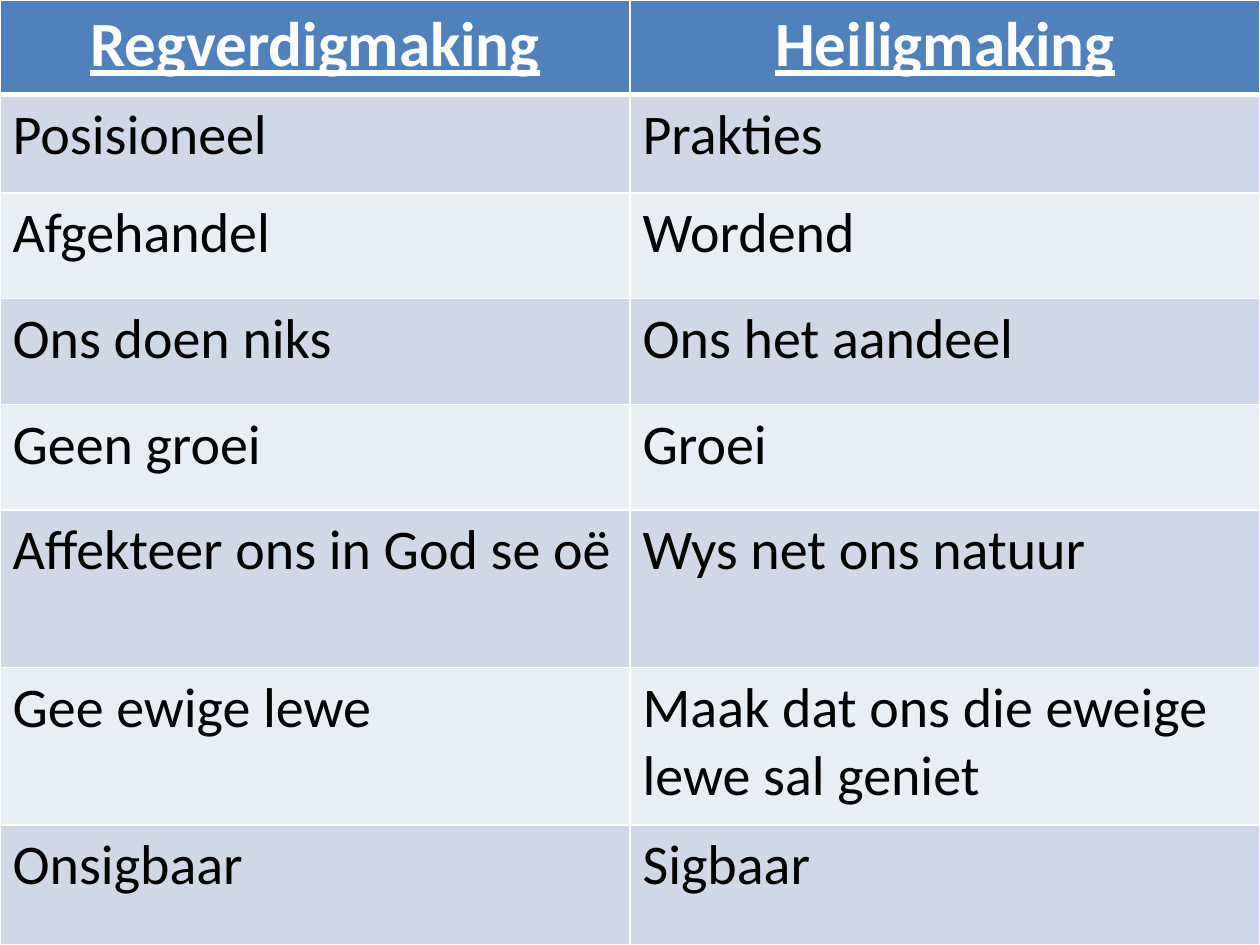
from lxml.etree import SubElement
from pptx import Presentation
from pptx.dml.color import RGBColor
from pptx.enum.text import PP_ALIGN
from pptx.oxml.ns import qn
from pptx.util import Inches, Pt

HEADINGS = ("Regverdigmaking", "Heiligmaking")
# Left text, right text, row height in inches
CONTRASTS = [
    ("Posisioneel", "Prakties", 0.78),
    ("Afgehandel", "Wordend", 0.84),
    ("Ons doen niks", "Ons het aandeel", 0.84),
    ("Geen groei", "Groei", 0.84),
    ("Affekteer ons in God se oë", "Wys net ons natuur", 1.25),
    ("Gee ewige lewe", "Maak dat ons die eweige lewe sal geniet", 1.25),
    ("Onsigbaar", "Sigbaar", 0.95),
]
HEADING_HEIGHT = 0.75
SLIDE_WIDTH, SLIDE_HEIGHT = 10, 7.5

THEME = {
    "font": "Calibri",
    "heading_size": 36,
    "body_size": 32,
    "heading_text": "FFFFFF",
    "body_text": "000000",
    "heading_fill": "4F81BD",
    "bands": ("D0D8E8", "E9EDF4"),
    "border": "FFFFFF",
    "thin": 1,
    "thick": 3,
}


def set_borders(cell, top, bottom):
    """Draw all four cell edges; top and bottom are widths in points."""
    properties = cell._tc.get_or_add_tcPr()
    thin = THEME["thin"]
    for tag, width in (("lnL", thin), ("lnR", thin), ("lnT", top), ("lnB", bottom)):
        line = SubElement(properties, qn(f"a:{tag}"), w=str(Pt(width)))
        fill = SubElement(line, qn("a:solidFill"))
        SubElement(fill, qn("a:srgbClr"), val=THEME["border"])


def fill_cell(cell, text, row):
    is_heading = row == 0
    kind = "heading" if is_heading else "body"
    set_borders(
        cell,
        top=THEME["thick" if row == 1 else "thin"],
        bottom=THEME["thick" if is_heading else "thin"],
    )
    colour = THEME["heading_fill"] if is_heading else THEME["bands"][(row - 1) % 2]
    cell.fill.solid()
    cell.fill.fore_color.rgb = RGBColor.from_string(colour)

    cell.text_frame.text = text
    paragraph = cell.text_frame.paragraphs[0]
    paragraph.alignment = PP_ALIGN.CENTER if is_heading else PP_ALIGN.LEFT
    font = paragraph.runs[0].font
    font.name = THEME["font"]
    font.size = Pt(THEME[f"{kind}_size"])
    font.color.rgb = RGBColor.from_string(THEME[f"{kind}_text"])
    font.bold = font.underline = is_heading


def main():
    presentation = Presentation()
    presentation.slide_width = Inches(SLIDE_WIDTH)
    presentation.slide_height = Inches(SLIDE_HEIGHT)
    slide = presentation.slides.add_slide(presentation.slide_layouts.get_by_name("Blank"))

    rows = [(*HEADINGS, HEADING_HEIGHT), *CONTRASTS]
    table = slide.shapes.add_table(
        len(rows), len(HEADINGS), 0, 0, Inches(SLIDE_WIDTH), Inches(SLIDE_HEIGHT)
    ).table
    for row, (*texts, height) in enumerate(rows):
        table.rows[row].height = Inches(height)
        for column, text in enumerate(texts):
            fill_cell(table.cell(row, column), text, row)

    presentation.save("out.pptx")


if __name__ == "__main__":
    main()
